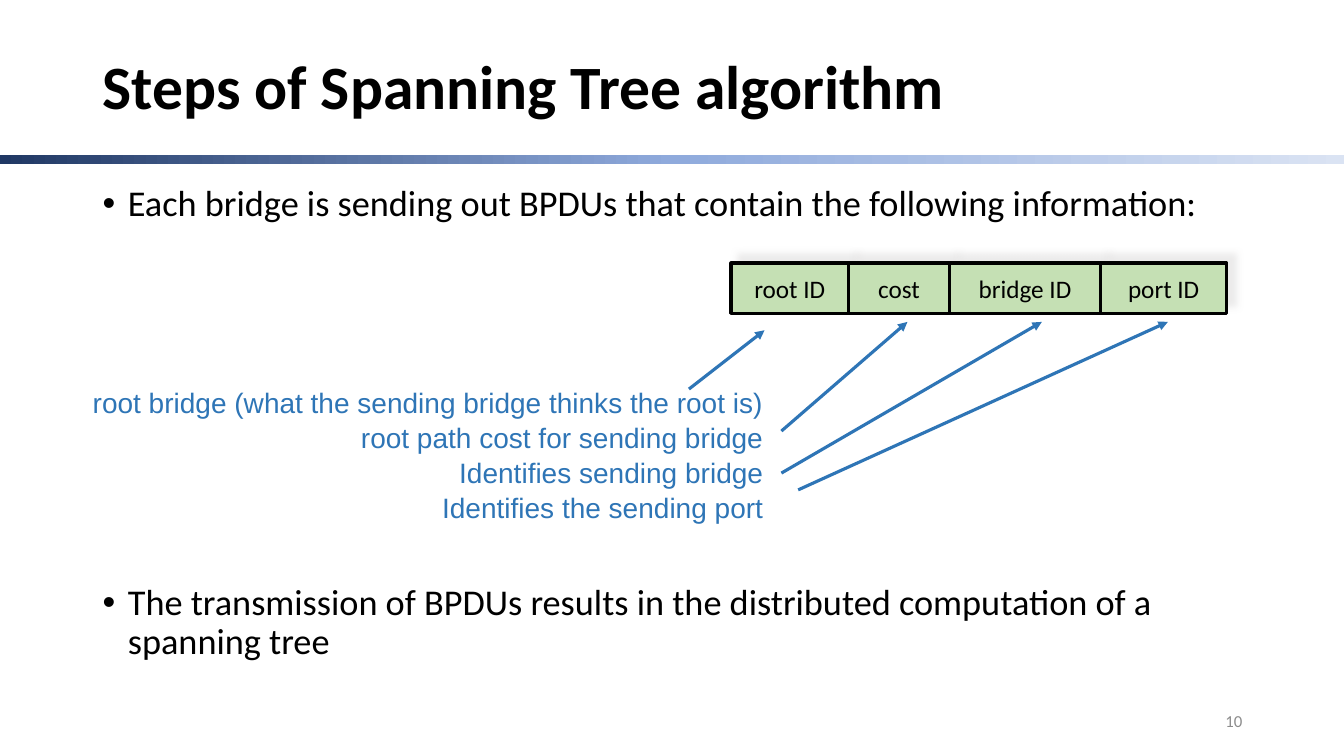
from copy import deepcopy

from lxml import etree
from pptx import Presentation
from pptx.dml.color import RGBColor
from pptx.enum.shapes import MSO_CONNECTOR, MSO_SHAPE
from pptx.enum.text import MSO_ANCHOR, PP_ALIGN
from pptx.oxml.ns import qn
from pptx.util import Inches, Pt

LEFT, CENTER, RIGHT = PP_ALIGN.LEFT, PP_ALIGN.CENTER, PP_ALIGN.RIGHT
TOP, MIDDLE = MSO_ANCHOR.TOP, MSO_ANCHOR.MIDDLE
RECTANGLE, STRAIGHT = MSO_SHAPE.RECTANGLE, MSO_CONNECTOR.STRAIGHT

COLORS = {
    "text": "000000",
    "note": "2E75B6",
    "field": "C5E0B4",
    "shadow": "E7E6E6",
    "number": "8C8C8C",
    "bar_start": "203864",
    "bar_middle": "8FAADC",
    "bar_end": "DAE3F3",
}
UNIT = 1 / 12
FIELD_TOP = 2.61


def color(name):
    return RGBColor.from_string(COLORS[name])


def write(box, lines, size, name, align, anchor, font="Calibri", bold=False, **spacing):
    frame = box.text_frame
    frame.word_wrap = True
    frame.vertical_anchor = anchor
    for index, line in enumerate(lines):
        para = frame.paragraphs[0] if index == 0 else frame.add_paragraph()
        para.alignment = align
        for key, value in spacing.items():
            setattr(para, key, value)
        span = para.add_run()
        span.text = line
        span.font.color.rgb = color(name)
        for key, value in {"size": Pt(size), "name": font, "bold": bold}.items():
            setattr(span.font, key, value)
    return frame


deck = Presentation()
deck.slide_width, deck.slide_height = Inches(13.33), Inches(7.5)
page = deck.slides.add_slide(deck.slide_layouts[6])
shapes = page.shapes

bar = shapes.add_shape(RECTANGLE, 0, Inches(1.54), deck.slide_width, Inches(0.09))
bar.shadow.inherit = False
bar.line.fill.background()
bar.fill.gradient()
bar.fill.gradient_angle = 0
stop_list = bar.fill.gradient_stops[0]._gs.getparent()
stop_list.append(deepcopy(stop_list[0]))
bar_colors = ["bar_start", "bar_middle", "bar_end"]
for index, (stop, name) in enumerate(zip(bar.fill.gradient_stops, bar_colors)):
    stop.position = index / 2
    stop.color.rgb = color(name)

title = shapes.add_textbox(Inches(0.92), Inches(0.4), Inches(11.5), Inches(0.97))
write(title, ["Steps of Spanning Tree algorithm"], 44, "text", LEFT, MIDDLE,
      bold=True, line_spacing=0.9)

body = shapes.add_textbox(Inches(0.92), Inches(1.79), Inches(11.5), Inches(4.97))
statements = [
    "Each bridge is sending out BPDUs that contain the following information:",
    "The transmission of BPDUs results in the distributed computation of a spanning tree",
]
frame = write(body, statements, 25.9, "text", LEFT, TOP, line_spacing=0.9)
for para, gap in zip(frame.paragraphs, [10, 257]):
    para.space_before = Pt(gap)
    properties = para._p.get_or_add_pPr()
    properties.set("marL", str(Inches(0.25)))
    properties.set("indent", str(-Inches(0.25)))
    etree.SubElement(properties, qn("a:buFont"), typeface="Arial")
    etree.SubElement(properties, qn("a:buChar"), char="•")

notes = shapes.add_textbox(Inches(0.78), Inches(3.78), Inches(6.89), Inches(1.43))
labels = [
    "root bridge (what the sending bridge thinks the root is)",
    "root path cost for sending bridge",
    "Identifies sending bridge",
    "Identifies the sending port",
]
write(notes, labels, 20, "note", RIGHT, TOP, font="Arial", space_after=Pt(0.8))

column = 87
for label, columns in [("root ID", 14), ("cost", 12), ("bridge ID", 18), ("port ID", 15)]:
    field = shapes.add_shape(RECTANGLE, Inches(column * UNIT), Inches(FIELD_TOP),
                             Inches(columns * UNIT), Inches(6 * UNIT))
    field.fill.solid()
    field.fill.fore_color.rgb = color("field")
    field.line.color.rgb = color("text")
    field.line.width = Pt(2.25)
    field.shadow.inherit = False
    effects = field._element.spPr.find(qn("a:effectLst"))
    shadow = etree.SubElement(effects, qn("a:outerShdw"), blurRad=str(Pt(5)),
                              dist=str(Pt(8.5)), dir="18900000", algn="ctr", rotWithShape="0")
    tint = etree.SubElement(shadow, qn("a:srgbClr"), val=COLORS["shadow"])
    etree.SubElement(tint, qn("a:alpha"), val="75000")
    write(field, [label], 18, "text", CENTER, MIDDLE)
    column += columns

arrows = [(82, 15, 91, 8), (93, 20, 108, 7), (93, 25, 124, 7), (95, 27, 139, 7)]
for start_column, start_row, end_column, end_row in arrows:
    arrow = shapes.add_connector(
        STRAIGHT,
        Inches(start_column * UNIT), Inches(FIELD_TOP + start_row * UNIT),
        Inches(end_column * UNIT), Inches(FIELD_TOP + end_row * UNIT))
    arrow.line.color.rgb = color("note")
    arrow.line.width = Pt(2.25)
    etree.SubElement(arrow.line._get_or_add_ln(), qn("a:tailEnd"), type="triangle")
    etree.SubElement(arrow._element.spPr, qn("a:effectLst"))

number = shapes.add_textbox(Inches(9.42), Inches(6.95), Inches(3), Inches(0.4))
write(number, ["10"], 12, "number", RIGHT, MIDDLE)

deck.save("out.pptx")
